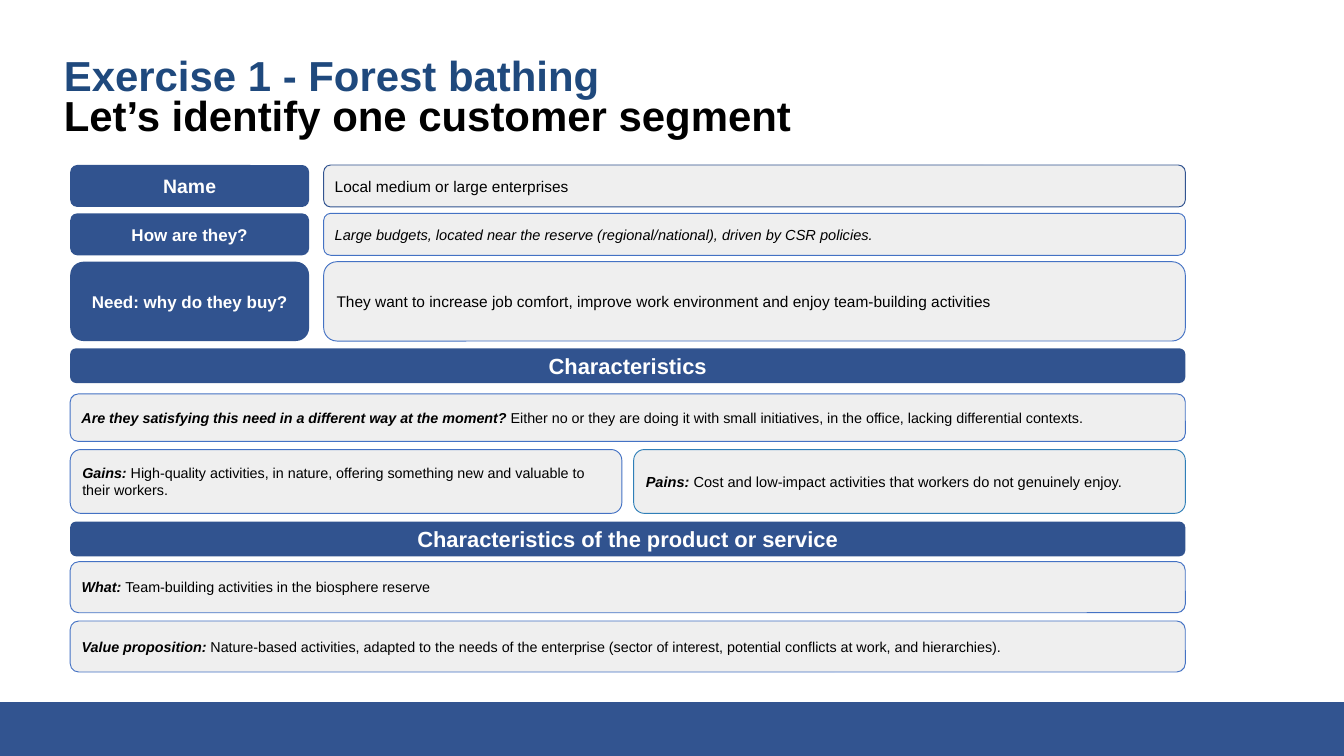
from dataclasses import dataclass

from pptx import Presentation
from pptx.dml.color import RGBColor
from pptx.enum.shapes import MSO_SHAPE as Shape
from pptx.enum.text import MSO_ANCHOR as Anchor, MSO_AUTO_SIZE as AutoSize, PP_ALIGN as Align
from pptx.util import Inches, Pt

FONT = "Arial"
WHITE, BLACK = "FFFFFF", "000000"
NAVY, FOOTER_BLUE, TITLE_BLUE = "31538F", "325490", "1F497D"
PALE, OUTLINE = "EFEFEF", "4472C4"

SLIDE_W, SLIDE_H = 14.74, 8.29
LEFT, FULL_W = 0.77, 12.23
LABEL_W = 2.62
ANSWER_LEFT, ANSWER_W = 3.55, 9.45
HALF_W, HALF_STEP = 6.05, 6.18


@dataclass
class Profile:
    """A label and its answer side by side."""
    label: str
    answer: str
    top: float
    height: float
    label_size: float
    answer_size: float
    italic: bool = False
    outline: str = OUTLINE


@dataclass
class Banner:
    text: str
    top: float


@dataclass
class Card:
    """A pale box with a bold italic lead-in."""
    lead: str
    text: str
    top: float
    height: float
    left: float = LEFT
    width: float = FULL_W
    size: float = 11.3
    outline: str = OUTLINE


PROFILES = [
    Profile("Name", "Local medium or large enterprises", 1.81, 0.46, 15.3, 12.2,
            outline=FOOTER_BLUE),
    Profile("How are they?",
            "Large budgets, located near the reserve (regional/national), driven by CSR policies.",
            2.34, 0.46, 13.4, 11.5, italic=True),
    Profile("Need: why do they buy?",
            "They want to increase job comfort, improve work environment and enjoy "
            "team-building activities", 2.87, 0.87, 13.4, 12.2),
]
BANNERS = [
    Banner("Characteristics", 3.82),
    Banner("Characteristics of the product or service", 5.72),
]
CARDS = [
    Card("Are they satisfying this need in a different way at the moment? ",
         "Either no or they are doing it with small initiatives, in the office, "
         "lacking differential contexts.", 4.32, 0.52),
    Card("Gains: ",
         "High-quality activities, in nature, offering something new and valuable "
         "to their workers.", 4.93, 0.7, width=HALF_W),
    Card("Pains: ", "Cost and low-impact activities that workers do not genuinely enjoy.",
         4.93, 0.7, left=LEFT + HALF_STEP, width=HALF_W, size=11.5, outline="2F7FB8"),
    Card("What: ", "Team-building activities in the biosphere reserve", 6.16, 0.56),
    Card("Value proposition: ",
         "Nature-based activities, adapted to the needs of the enterprise (sector of "
         "interest, potential conflicts at work, and hierarchies).", 6.81, 0.56),
]


def color(value: str) -> RGBColor:
    return RGBColor.from_string(value)


def style(run, size: float, ink: str, bold: bool = False, italic: bool = False) -> None:
    font = run.font
    font.name, font.size = FONT, Pt(size)
    font.bold, font.italic = bold, italic
    font.color.rgb = color(ink)


def draw_box(slide, kind, left: float, top: float, width: float, height: float,
             fill: str, outline: str | None = None):
    box = slide.shapes.add_shape(kind, Inches(left), Inches(top), Inches(width), Inches(height))
    box.shadow.inherit = False
    box.fill.solid()
    box.fill.fore_color.rgb = color(fill)
    if outline:
        box.line.color.rgb = color(outline)
        box.line.width = Pt(0.75)
    else:
        box.line.fill.background()
    return box


def write(box, texts: list[str], align):
    """Put the texts in one paragraph and return its runs."""
    frame = box.text_frame
    frame.word_wrap = True
    frame.vertical_anchor = Anchor.MIDDLE
    frame.margin_left = frame.margin_right = Inches(0.1)
    frame.margin_top = frame.margin_bottom = Inches(0.04)
    paragraph = frame.paragraphs[0]
    paragraph.alignment = align
    for text in texts:
        paragraph.add_run().text = text
    return paragraph.runs


def draw_label(slide, text: str, top: float, width: float, height: float, size: float) -> None:
    label = draw_box(slide, Shape.ROUNDED_RECTANGLE, LEFT, top, width, height, NAVY)
    style(write(label, [text], Align.CENTER)[0], size, WHITE, bold=True)


def draw_profile(slide, row: Profile) -> None:
    draw_label(slide, row.label, row.top, LABEL_W, row.height, row.label_size)
    answer = draw_box(slide, Shape.ROUNDED_RECTANGLE, ANSWER_LEFT, row.top, ANSWER_W,
                      row.height, PALE, row.outline)
    style(write(answer, [row.answer], Align.LEFT)[0], row.answer_size, BLACK, italic=row.italic)


def draw_card(slide, card: Card) -> None:
    box = draw_box(slide, Shape.ROUNDED_RECTANGLE, card.left, card.top, card.width,
                   card.height, PALE, card.outline)
    lead, body = write(box, [card.lead, card.text], Align.LEFT)
    style(lead, card.size, BLACK, bold=True, italic=True)
    style(body, card.size, BLACK)


def draw_title(slide) -> None:
    title = slide.shapes.title
    title.left, title.top = Inches(0.7), Inches(0.65)
    title.width, title.height = Inches(11.33), Inches(0.43)
    frame = title.text_frame
    frame.text = "Exercise 1 - Forest bathing\nLet’s identify one customer segment"
    frame.word_wrap = True
    frame.auto_size = AutoSize.NONE
    frame.vertical_anchor = Anchor.TOP
    frame.margin_left = frame.margin_right = frame.margin_top = frame.margin_bottom = 0
    for paragraph, ink in zip(frame.paragraphs, (TITLE_BLUE, BLACK)):
        paragraph.alignment = Align.LEFT
        paragraph.line_spacing = 0.8
        paragraph.space_before = Pt(0)
        style(paragraph.runs[0], 33.1, ink, bold=True)


def main() -> None:
    deck = Presentation()
    deck.slide_width, deck.slide_height = Inches(SLIDE_W), Inches(SLIDE_H)
    slide = deck.slides.add_slide(deck.slide_layouts[5])

    # Footer band and title
    draw_box(slide, Shape.RECTANGLE, 0, 7.7, SLIDE_W, SLIDE_H - 7.7, FOOTER_BLUE)
    draw_title(slide)

    # Customer segment
    for row in PROFILES:
        draw_profile(slide, row)

    # Characteristics of the segment and of the offer
    for banner in BANNERS:
        draw_label(slide, banner.text, banner.top, FULL_W, 0.38, 17.3)
    for card in CARDS:
        draw_card(slide, card)

    deck.save("out.pptx")


if __name__ == "__main__":
    main()
